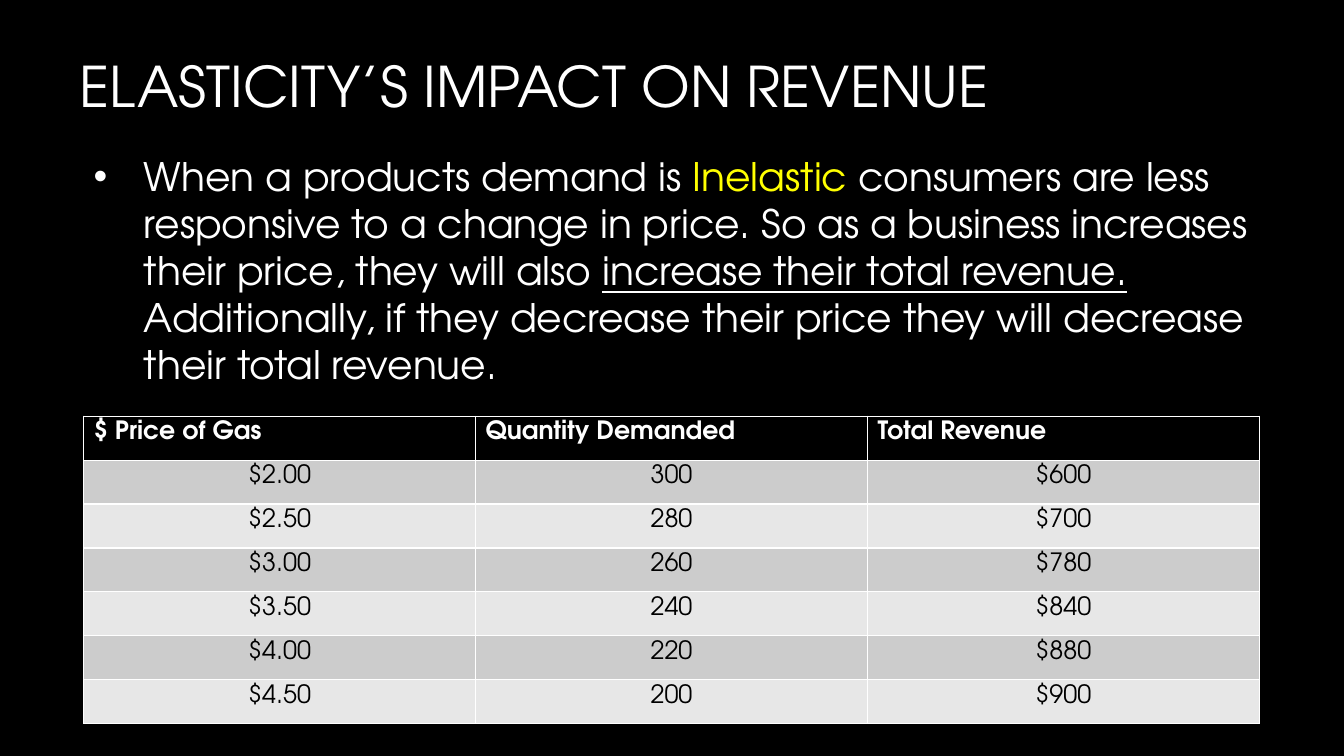
from dataclasses import dataclass, field
from typing import Any

from lxml import etree
from pptx import Presentation
from pptx import util as u
from pptx.dml import color
from pptx.enum import text
from pptx.oxml import ns

FONT = "TeX Gyre Adventor"
WHITE, BLACK, YELLOW = "FFFFFF", "000000", "FFFF00"
BANDS = ("CCCCCC", "E7E7E7")
LEFT, WIDTH = 0.83, 11.66
ROW_HEIGHT = 3.05 / 7
HEADERS = ("$ Price of Gas", "Quantity Demanded", "Total Revenue")
DEMAND = ((2.0, 300), (2.5, 280), (3.0, 260), (3.5, 240), (4.0, 220), (4.5, 200))


@dataclass
class Phrase:
    words: str
    size: int
    hue: str = WHITE
    values: dict[str, Any] = field(default_factory=dict)


EXPLANATION = (
    Phrase("When a products demand is ", 28),
    Phrase("Inelastic ", 28, YELLOW),
    Phrase("consumers are less responsive to a change in price. So as a business "
           "increases their price, they will also ", 28),
    Phrase("increase their total revenue.", 28, values={"underline": True}),
    Phrase(" Additionally, if they decrease their price they will decrease "
           "their total revenue.", 28),
)


def rgb(value: str) -> color.RGBColor:
    return color.RGBColor.from_string(value)


def set_values(target: Any, values: dict[str, Any]) -> None:
    for name, value in values.items():
        setattr(target, name, value)


def add_phrase(paragraph: Any, phrase: Phrase) -> Any:
    run = paragraph.add_run()
    run.text = phrase.words
    set_values(run.font, {"name": FONT, "size": u.Pt(phrase.size), **phrase.values})
    run.font.color.rgb = rgb(phrase.hue)
    return run


def place(shape: Any, left: float, top: float, width: float, height: float) -> None:
    lengths = {"left": left, "top": top, "width": width, "height": height}
    set_values(shape, {name: u.Inches(value) for name, value in lengths.items()})


def add_title(slide: Any) -> None:
    title = slide.shapes.title
    place(title, 0.69, 0.44, 10.83, 0.81)
    set_values(title.text_frame, {
        "word_wrap": True,
        "auto_size": text.MSO_AUTO_SIZE.NONE,
        "vertical_anchor": text.MSO_ANCHOR.MIDDLE,
    })
    paragraph = title.text_frame.paragraphs[0]
    paragraph.alignment = text.PP_ALIGN.LEFT
    run = add_phrase(paragraph, Phrase("ELASTICITY’S IMPACT ON REVENUE", 40))
    run.font.fill.gradient()
    run.font.fill.gradient_angle = 267
    for stop, hue in zip(run.font.fill.gradient_stops, (WHITE, "A6A6A6")):
        stop.color.rgb = rgb(hue)


def add_explanation(slide: Any) -> None:
    box = slide.shapes.add_textbox(0, 0, 0, 0)
    place(box, LEFT, 1.46, WIDTH, 2.46)
    set_values(box.text_frame, {
        "word_wrap": True,
        "auto_size": text.MSO_AUTO_SIZE.SHAPE_TO_FIT_TEXT,
    })
    paragraph = box.text_frame.paragraphs[0]
    for phrase in EXPLANATION:
        add_phrase(paragraph, phrase)
    properties = paragraph._p.get_or_add_pPr()
    properties.set("marL", str(u.Inches(0.5)))
    properties.set("indent", str(u.Inches(-0.5)))
    etree.SubElement(properties, ns.qn("a:buFont"), typeface="Arial")
    etree.SubElement(properties, ns.qn("a:buChar"), char="•")


def add_borders(cell: Any) -> None:
    properties = cell._tc.get_or_add_tcPr()
    for position, side in enumerate(("lnL", "lnR", "lnT", "lnB")):
        line = etree.Element(ns.qn(f"a:{side}"), w=str(u.Pt(1)))
        fill = etree.SubElement(line, ns.qn("a:solidFill"))
        etree.SubElement(fill, ns.qn("a:srgbClr"), val=WHITE)
        properties.insert(position, line)


def add_revenue_table(slide: Any) -> None:
    """Fill the table, with revenue worked out as price times quantity."""
    rows = [HEADERS] + [
        (f"${price:.2f}", str(quantity), f"${price * quantity:.0f}")
        for price, quantity in DEMAND
    ]
    table = slide.shapes.add_table(
        len(rows), len(HEADERS), u.Inches(LEFT), u.Inches(4.13),
        u.Inches(WIDTH), u.Inches(ROW_HEIGHT * len(rows)),
    ).table
    for row_index, row in enumerate(rows):
        is_header = row_index == 0
        background = BLACK if is_header else BANDS[(row_index - 1) % 2]
        for column_index, words in enumerate(row):
            cell = table.cell(row_index, column_index)
            cell.fill.solid()
            cell.fill.fore_color.rgb = rgb(background)
            add_borders(cell)
            paragraph = cell.text_frame.paragraphs[0]
            paragraph.alignment = text.PP_ALIGN.LEFT if is_header else text.PP_ALIGN.CENTER
            hue = WHITE if is_header else BLACK
            add_phrase(paragraph, Phrase(words, 18, hue, {"bold": is_header}))


def main() -> None:
    presentation = Presentation()
    set_values(presentation, {
        "slide_width": u.Inches(13.33), "slide_height": u.Inches(7.5),
    })
    slide = presentation.slides.add_slide(presentation.slide_layouts[5])
    slide.background.fill.solid()
    slide.background.fill.fore_color.rgb = rgb(BLACK)
    add_title(slide)
    add_explanation(slide)
    add_revenue_table(slide)
    presentation.save("out.pptx")


if __name__ == "__main__":
    main()
